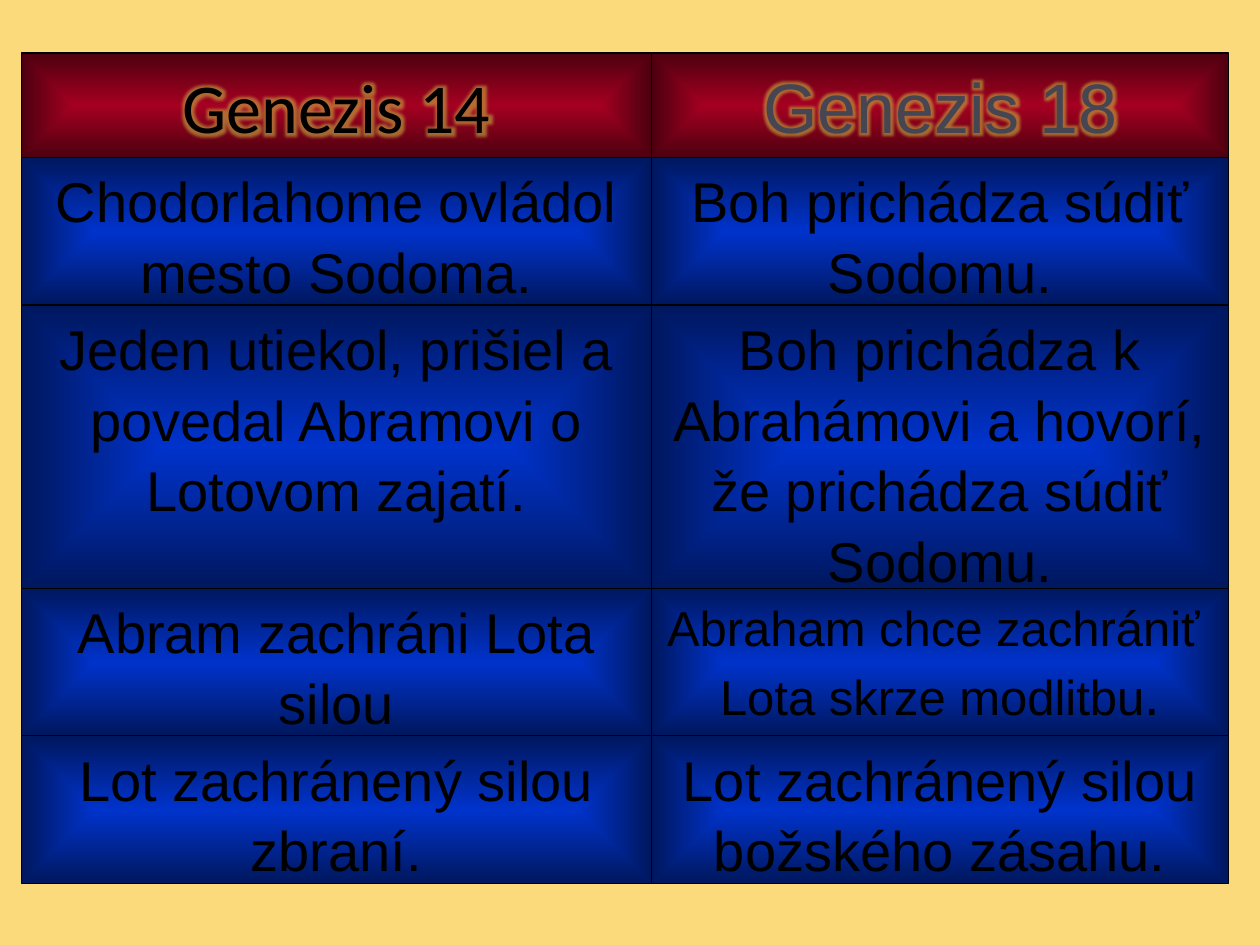
from itertools import accumulate

from lxml.etree import SubElement
from pptx import Presentation
from pptx.dml.color import RGBColor
from pptx.enum.shapes import MSO_SHAPE
from pptx.enum.text import MSO_ANCHOR, PP_ALIGN
from pptx.oxml.ns import qn
from pptx.util import Inches, Pt

SAND = RGBColor(0xFA, 0xDA, 0x7A)
CRIMSON = RGBColor(0xA5, 0x00, 0x21)
BLUE = RGBColor(0x00, 0x33, 0xCC)
BLACK = RGBColor(0x00, 0x00, 0x00)
SLATE = RGBColor(0x46, 0x46, 0x53)
GOLD = RGBColor(0xC8, 0xB0, 0x40)


def add_node(parent, tag, **attributes):
    return SubElement(parent, qn(tag), {k: str(v) for k, v in attributes.items()})


class ComparisonSlide:
    """Holds the style and the current slide."""

    paragraph_format = {"alignment": PP_ALIGN.CENTER}
    body_format = {"space_before": Pt(6), "line_spacing": 1.05}

    def __init__(self, slide):
        self.slide = slide
        background = slide.background.fill
        background.solid()
        background.fore_color.rgb = SAND

    def shade_to_edges(self, cell, color):
        """Fill from a bright centre to dark edges."""
        cell.fill.background()
        no_fill = cell._element.spPr.find(qn("a:noFill"))
        gradient = add_node(cell._element.spPr, "a:gradFill", rotWithShape=0)
        no_fill.getparent().replace(no_fill, gradient)
        stops = add_node(gradient, "a:gsLst")
        add_node(add_node(stops, "a:gs", pos=0), "a:srgbClr", val=color)
        edge = add_node(add_node(stops, "a:gs", pos=100000), "a:srgbClr", val=color)
        add_node(edge, "a:gamma")
        add_node(edge, "a:shade", val=46275)
        add_node(edge, "a:invGamma")
        shape_path = add_node(gradient, "a:path", path="shape")
        add_node(shape_path, "a:fillToRect", l=50000, t=50000, r=50000, b=50000)

    def add_cell(self, box, color, runs, anchor, formats):
        cell = self.slide.shapes.add_shape(
            MSO_SHAPE.RECTANGLE, *(Inches(length) for length in box))
        cell.shadow.inherit = False
        self.shade_to_edges(cell, color)
        cell.line.color.rgb = BLACK
        cell.line.width = Pt(0.75)
        frame = cell.text_frame
        frame.word_wrap = True
        frame.vertical_anchor = anchor
        paragraph = frame.paragraphs[0]
        for name, value in {**self.paragraph_format, **formats}.items():
            setattr(paragraph, name, value)
        for text, size, font_name, font_color in runs:
            run = paragraph.add_run()
            run.text = text
            for name, value in {"size": Pt(size), "name": font_name}.items():
                setattr(run.font, name, value)
            run.font.color.rgb = font_color
        return paragraph

    def add_heading(self, box, text, font_name, font_color):
        heading = self.add_cell(
            box, CRIMSON, [(text, 40, font_name, font_color)], MSO_ANCHOR.MIDDLE, {})
        properties = heading.runs[0].font._element
        effects = add_node(properties, "a:effectLst")
        properties.find(qn("a:solidFill")).addnext(effects)
        glow = add_node(effects, "a:glow", rad=Pt(8))
        add_node(add_node(glow, "a:srgbClr", val=GOLD), "a:alpha", val=60000)

    def add_statement(self, box, parts):
        runs = [(text, size, "Arial", BLACK) for text, size in parts]
        self.add_cell(box, BLUE, runs, MSO_ANCHOR.TOP, self.body_format)


# Grid: left edge and width of each column, height of each row
COLUMNS = [(0.17, 5), (5.17, 4.58)]
ROW_HEIGHTS = [0.83, 1.17, 2.25, 1.17, 1.17]
ROW_TOPS = list(accumulate(ROW_HEIGHTS[:-1], initial=0.42))

HEADINGS = [("Genezis 14", "Calibri", BLACK), ("Genezis 18", "Arial", SLATE)]
STATEMENTS = [
    ([("Chodorlahome ovládol mesto Sodoma.", 32)],
     [("Boh prichádza súdiť Sodomu.", 32)]),
    ([("Jeden utiekol, prišiel a povedal Abramovi o Lotovom zajatí.", 32)],
     [("Boh prichádza k Abrahámovi a hovorí, že prichádza súdiť Sodomu.", 32)]),
    ([("Abram zachráni Lota silou", 32)],
     [("Abraham chce zachrániť  Lota skrze modlitbu", 28), (".", 32)]),
    ([("Lot zachránený silou zbraní.", 32)],
     [("Lot zachránený silou božského zásahu.", 32)]),
]


def main():
    presentation = Presentation()
    presentation.slide_width = Inches(10)
    presentation.slide_height = Inches(7.5)
    comparison = ComparisonSlide(
        presentation.slides.add_slide(presentation.slide_layouts[6]))

    # Heading row
    for (left, width), heading in zip(COLUMNS, HEADINGS):
        comparison.add_heading((left, ROW_TOPS[0], width, ROW_HEIGHTS[0]), *heading)

    # Statement rows
    for top, height, statements in zip(ROW_TOPS[1:], ROW_HEIGHTS[1:], STATEMENTS):
        for (left, width), parts in zip(COLUMNS, statements):
            comparison.add_statement((left, top, width, height), parts)

    presentation.save("out.pptx")


if __name__ == "__main__":
    main()
